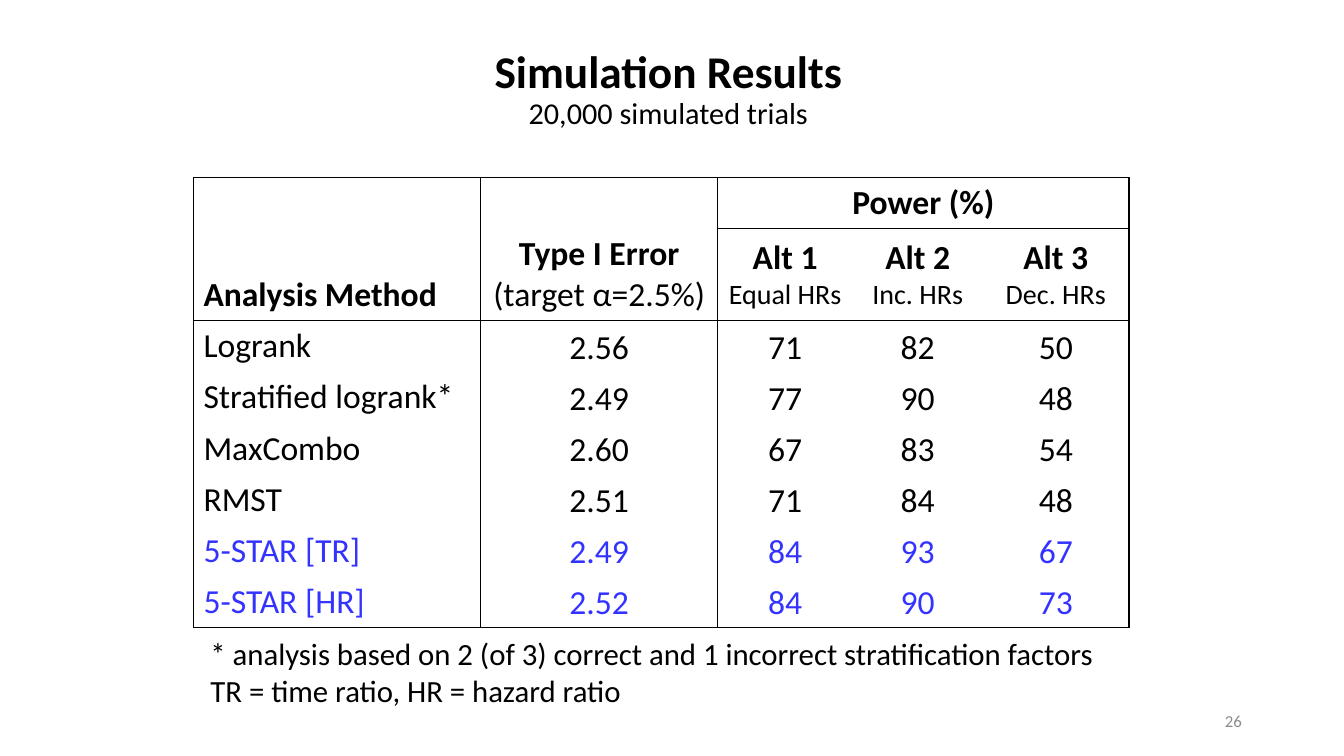
from dataclasses import dataclass

from lxml import etree
from pptx import Presentation
from pptx.dml.color import RGBColor
from pptx.enum.text import MSO_ANCHOR, MSO_AUTO_SIZE, PP_ALIGN
from pptx.oxml.ns import qn
from pptx.util import Pt

LEFT, CENTER, RIGHT = PP_ALIGN.LEFT, PP_ALIGN.CENTER, PP_ALIGN.RIGHT
MIDDLE, BOTTOM = MSO_ANCHOR.MIDDLE, MSO_ANCHOR.BOTTOM
NO_AUTOFIT, GROW = MSO_AUTO_SIZE.NONE, MSO_AUTO_SIZE.SHAPE_TO_FIT_TEXT


@dataclass(frozen=True)
class Theme:
    font: str = "Calibri"
    ink: str = "000000"
    accent: str = "3333FF"
    muted: str = "8C8C8C"
    paper: str = "FFFFFF"
    title: float = 32.4
    subtitle: float = 21.6
    table: float = 24
    detail: float = 20
    note: float = 22
    number: float = 12
    rule: float = 1


T = Theme()

TITLE, SUBTITLE = "Simulation Results", "20,000 simulated trials"
HEADERS = [
    (0, 0, [[("Analysis Method", T.table, True)]]),
    (0, 1, [[("Type I Error ", T.table, True), ("(target α=2.5%)", T.table, False)]]),
    (0, 2, [[("Power (%)", T.table, True)]]),
    (1, 2, [[("Alt 1", T.table, True)], [("Equal HRs", T.detail, False)]]),
    (1, 3, [[("Alt 2", T.table, True)], [("Inc. HRs", T.detail, False)]]),
    (1, 4, [[("Alt 3", T.table, True)], [("Dec. HRs", T.detail, False)]]),
]
RESULTS = [
    ("Logrank", "2.56", "71", "82", "50"),
    ("Stratified logrank*", "2.49", "77", "90", "48"),
    ("MaxCombo", "2.60", "67", "83", "54"),
    ("RMST", "2.51", "71", "84", "48"),
    ("5-STAR [TR]", "2.49", "84", "93", "67"),
    ("5-STAR [HR]", "2.52", "84", "90", "73"),
]
NOTES = [
    "* analysis based on 2 (of 3) correct and 1 incorrect stratification factors",
    "TR = time ratio, HR = hazard ratio",
]
PAGE = "26"

COL_WIDTHS = [205.2, 169.2, 96.5, 92.9, 104.4]
ROW_HEIGHTS = [36.5, 65.5] + [36.5] * len(RESULTS)
HEADER_ROWS = 2
MERGES = [((0, 0), (1, 0)), ((0, 1), (1, 1)), ((0, 2), (0, 4))]
RULED_COLS = {0, 1, 2, len(COL_WIDTHS)}
RULED_ROWS = {0, HEADER_ROWS, len(ROW_HEIGHTS)}


def style(font, size, color=T.ink, bold=False):
    font.name, font.size, font.bold = T.font, Pt(size), bold
    font.color.rgb = RGBColor.from_string(color)


def add_run(p, text, size, bold):
    r = p.add_run()
    r.text = text
    style(r.font, size, bold=bold)


def add_text(slide, box, lines, size, color, align, anchor=None):
    tf = slide.shapes.add_textbox(*map(Pt, box)).text_frame
    tf.word_wrap = True
    tf.vertical_anchor = anchor
    tf.text = "\n".join(lines)
    for p in tf.paragraphs:
        p.alignment = align
        style(p.font, size, color)
    return tf


def set_borders(cell, row, col):
    bottom, right = row + cell.span_height, col + cell.span_width

    def ruled_row(edge):
        return edge in RULED_ROWS or (edge == 1 and col >= 2)

    edges = {
        "a:lnL": col in RULED_COLS,
        "a:lnR": right in RULED_COLS,
        "a:lnT": ruled_row(row),
        "a:lnB": ruled_row(bottom),
    }
    tcPr = cell._tc.get_or_add_tcPr()
    for tag, ruled in edges.items():
        ln = etree.SubElement(tcPr, qn(tag), w=str(Pt(T.rule)))
        if ruled:
            fill = etree.SubElement(ln, qn("a:solidFill"))
            etree.SubElement(fill, qn("a:srgbClr"), val=T.ink)
        else:
            etree.SubElement(ln, qn("a:noFill"))


def add_title(slide):
    sp = slide.shapes.title
    sp.left, sp.top, sp.width, sp.height = map(Pt, (63.4, 34.6, 828, 94 - 34.6))
    tf = sp.text_frame
    tf.auto_size = NO_AUTOFIT
    tf.vertical_anchor = MIDDLE
    p = tf.paragraphs[0]
    p.alignment, p.line_spacing = CENTER, 0.9
    add_run(p, TITLE, T.title, True)
    p.add_line_break()
    add_run(p, SUBTITLE, T.subtitle, False)


def add_results(slide):
    box = (138.2, 126.9, sum(COL_WIDTHS), sum(ROW_HEIGHTS))
    table = slide.shapes.add_table(len(ROW_HEIGHTS), len(COL_WIDTHS), *map(Pt, box)).table
    table.first_row = table.horz_banding = False
    for column, width in zip(table.columns, COL_WIDTHS):
        column.width = Pt(width)
    for row, height in zip(table.rows, ROW_HEIGHTS):
        row.height = Pt(height)
    for first, last in MERGES:
        table.cell(*first).merge(table.cell(*last))

    for row in range(len(ROW_HEIGHTS)):
        for col in range(len(COL_WIDTHS)):
            cell = table.cell(row, col)
            set_borders(cell, row, col)
            cell.fill.solid()
            cell.fill.fore_color.rgb = RGBColor.from_string(T.paper)

    for row, col, paragraphs in HEADERS:
        cell = table.cell(row, col)
        cell.vertical_anchor = BOTTOM if cell.span_height > 1 else MIDDLE
        tf = cell.text_frame
        for i, runs in enumerate(paragraphs):
            p = tf.add_paragraph() if i else tf.paragraphs[0]
            p.alignment = CENTER if col else LEFT
            for run in runs:
                add_run(p, *run)

    for row, values in enumerate(RESULTS, HEADER_ROWS):
        color = T.accent if values[0].startswith("5-STAR") else T.ink
        for col, value in enumerate(values):
            cell = table.cell(row, col)
            cell.vertical_anchor = MIDDLE
            cell.text = value
            p = cell.text_frame.paragraphs[0]
            style(p.font, T.table, color)
            if col:
                p.alignment, p.line_spacing = CENTER, 1.07
                cell.margin_left = cell.margin_right = Pt(5)
                cell.margin_top = cell.margin_bottom = Pt(0)


def main():
    prs = Presentation()
    prs.slide_width, prs.slide_height = Pt(960), Pt(540)
    slide = prs.slides.add_slide(prs.slide_layouts[5])
    add_title(slide)
    add_results(slide)
    notes = add_text(slide, (143.3, 450, 648, 60.5), NOTES, T.note, T.ink, LEFT)
    notes.auto_size = GROW
    add_text(slide, (678.2, 500.4, 216, 28.8), [PAGE], T.number, T.muted, RIGHT, MIDDLE)
    prs.save("out.pptx")


if __name__ == "__main__":
    main()
